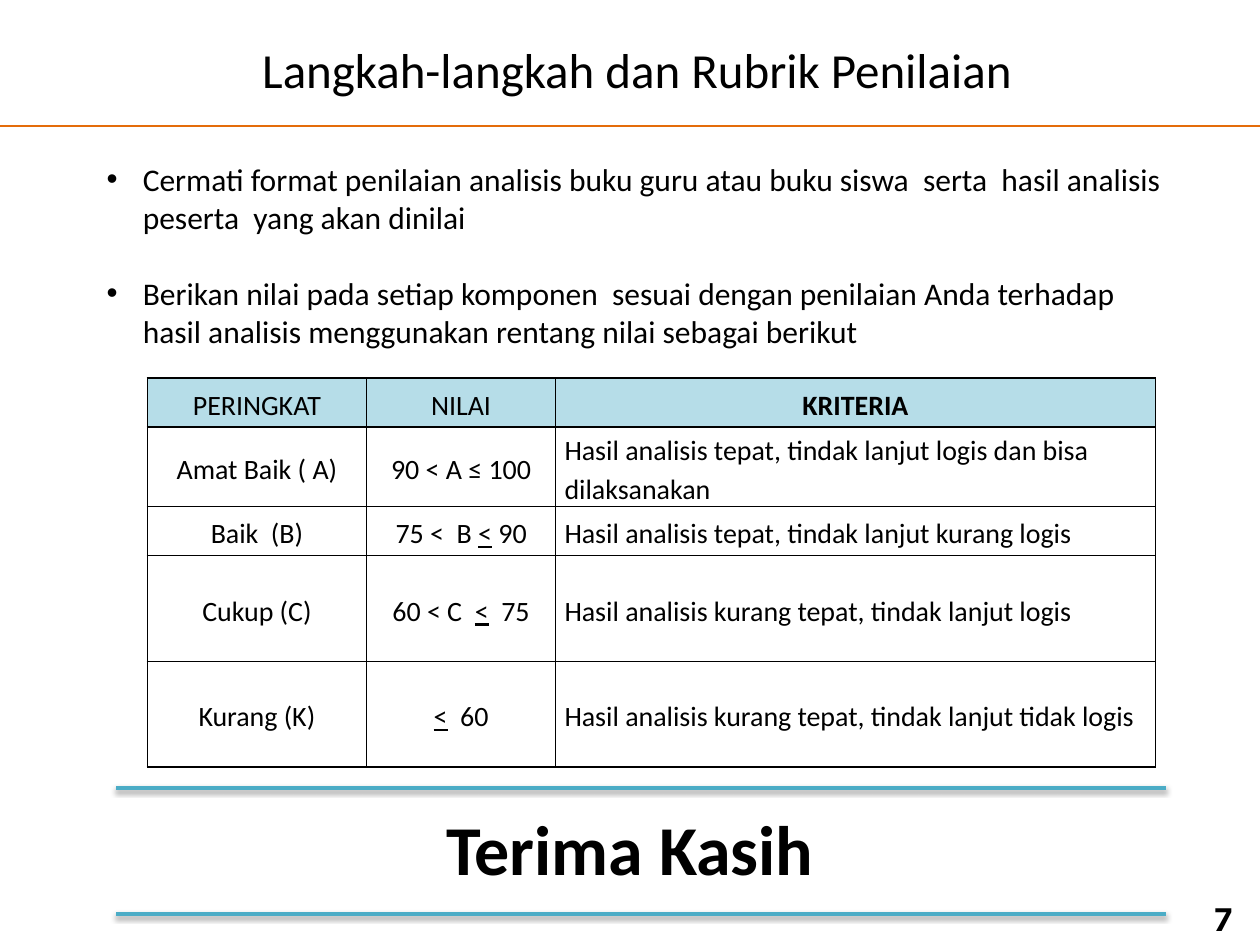
from lxml.etree import SubElement
from pptx import Presentation
from pptx.dml.color import RGBColor
from pptx.enum.shapes import MSO_CONNECTOR
from pptx.enum.text import MSO_ANCHOR, PP_ALIGN
from pptx.oxml import parse_xml
from pptx.oxml.ns import nsdecls, qn
from pptx.util import Cm, Pt

COLOURS = {
    "text": "000000",
    "rule": "E46C0A",
    "accent": "4BACC6",
    "header": "B6DDE8",
}
STEPS = [
    "Cermati format penilaian analisis buku guru atau buku siswa  serta  hasil analisis "
    "peserta  yang akan dinilai",
    "Berikan nilai pada setiap komponen  sesuai dengan penilaian Anda terhadap "
    "hasil analisis menggunakan rentang nilai sebagai berikut",
]
# Underscores enclose underlined text.
RUBRIC = [
    ("PERINGKAT", "NILAI", "KRITERIA"),
    ("Amat Baik ( A)", "90 < A ≤ 100",
     "Hasil analisis tepat, tindak lanjut logis dan bisa dilaksanakan"),
    ("Baik  (B)", "75 <  B _<_ 90", "Hasil analisis tepat, tindak lanjut kurang logis"),
    ("Cukup (C)", "60 < C  _<_  75", "Hasil analisis kurang tepat, tindak lanjut logis"),
    ("Kurang (K)", "_<_  60", "Hasil analisis kurang tepat, tindak lanjut tidak logis"),
]
COLUMN_WIDTHS = [4.42, 3.81, 12.09]
ROW_HEIGHTS = [0.99, 1.6, 0.99, 2.13, 2.13]


def colour(name):
    return RGBColor.from_string(COLOURS[name])


def write(para, text, size=18, font="Calibri", bold=False, align=PP_ALIGN.CENTER,
          spacing=None, after=0, bullet=False):
    """Fill a paragraph; text between underscores is underlined."""
    if bullet:
        properties = para._p.get_or_add_pPr()
        properties.set("marL", str(Cm(0.73)))
        properties.set("indent", str(-Cm(0.73)))
        SubElement(properties, qn("a:buFont"), typeface="Arial")
        SubElement(properties, qn("a:buChar"), char="•")
    para.alignment = align
    para.space_after = Pt(after)
    if spacing:
        para.line_spacing = spacing
    for index, part in enumerate(text.split("_")):
        if part:
            span = para.add_run()
            span.text = part
            span.font.name = font
            span.font.size = Pt(size)
            span.font.bold = bold
            span.font.underline = index % 2 == 1
            span.font.color.rgb = colour("text")


class SlideBuilder:
    def __init__(self, page):
        self.page = page

    def text(self, left, top, width, height, lines, anchor=MSO_ANCHOR.MIDDLE,
             gap=0, **style):
        box = self.page.shapes.add_textbox(Cm(left), Cm(top), Cm(width), Cm(height))
        frame = box.text_frame
        frame.word_wrap = True
        frame.vertical_anchor = anchor
        for index, line in enumerate(lines):
            para = frame.add_paragraph() if index else frame.paragraphs[0]
            write(para, line, after=gap if index < len(lines) - 1 else 0, **style)

    def rule(self, left, right, top, name, weight, shadow=False):
        line = self.page.shapes.add_connector(
            MSO_CONNECTOR.STRAIGHT, Cm(left), Cm(top), Cm(right), Cm(top))
        line.line.color.rgb = colour(name)
        line.line.width = Pt(weight)
        effects = SubElement(line._element.spPr, qn("a:effectLst"))
        if shadow:
            effects.append(parse_xml(
                f'<a:outerShdw {nsdecls("a")} blurRad="{Pt(3.1)}" dist="{Pt(1.6)}" '
                f'dir="5400000" rotWithShape="0"><a:srgbClr val="{COLOURS["text"]}">'
                '<a:alpha val="38000"/></a:srgbClr></a:outerShdw>'))

    def borders(self, cell):
        properties = cell._tc.get_or_add_tcPr()
        for index, side in enumerate(("lnL", "lnR", "lnT", "lnB")):
            properties.insert(index, parse_xml(
                f'<a:{side} {nsdecls("a")} w="{Pt(1)}"><a:solidFill>'
                f'<a:srgbClr val="{COLOURS["text"]}"/></a:solidFill></a:{side}>'))

    def table(self, left, top, rows, widths, heights):
        table = self.page.shapes.add_table(
            len(rows), len(widths), Cm(left), Cm(top),
            Cm(sum(widths)), Cm(sum(heights))).table
        table.first_row = table.horz_banding = False
        for column, width in zip(table.columns, widths):
            column.width = Cm(width)
        for row, height in zip(table.rows, heights):
            row.height = Cm(height)
        for r, texts in enumerate(rows):
            for c, text in enumerate(texts):
                cell = table.cell(r, c)
                cell.vertical_anchor = MSO_ANCHOR.MIDDLE
                cell.margin_left = cell.margin_right = Cm(0.18)
                cell.margin_top, cell.margin_bottom = Cm(0.03), Cm(0)
                if r == 0:
                    cell.fill.solid()
                    cell.fill.fore_color.rgb = colour("header")
                else:
                    cell.fill.background()
                self.borders(cell)
                criterion = c == len(widths) - 1
                write(cell.text_frame.paragraphs[0], text, size=16, spacing=1.15,
                      after=6, bold=criterion and r == 0,
                      align=PP_ALIGN.LEFT if criterion and r else PP_ALIGN.CENTER)


def main():
    deck = Presentation()
    deck.slide_width, deck.slide_height = Cm(25.4), Cm(19.05)
    builder = SlideBuilder(deck.slides.add_slide(deck.slide_layouts[6]))

    builder.rule(0, 25.53, 2.54, "rule", 1.5)
    builder.text(23.62, 17.98, 2.08, 1.02, ["7"], size=20, font="Karla", bold=True)
    builder.text(3.25, 0.28, 19.18, 2.21, ["Langkah-langkah dan Rubrik Penilaian"], size=28)
    builder.text(1.9, 3.1, 21.8, 4.11, STEPS, anchor=MSO_ANCHOR.TOP, gap=22,
                 align=PP_ALIGN.LEFT, bullet=True)
    builder.text(1.9, 15.88, 21.6, 2.41, ["Terima Kasih"], size=40, bold=True)
    for top in (15.88, 18.42):
        builder.rule(2.34, 23.5, top, "accent", 2, shadow=True)
    builder.table(2.97, 7.62, RUBRIC, COLUMN_WIDTHS, ROW_HEIGHTS)

    deck.save("out.pptx")


if __name__ == "__main__":
    main()
